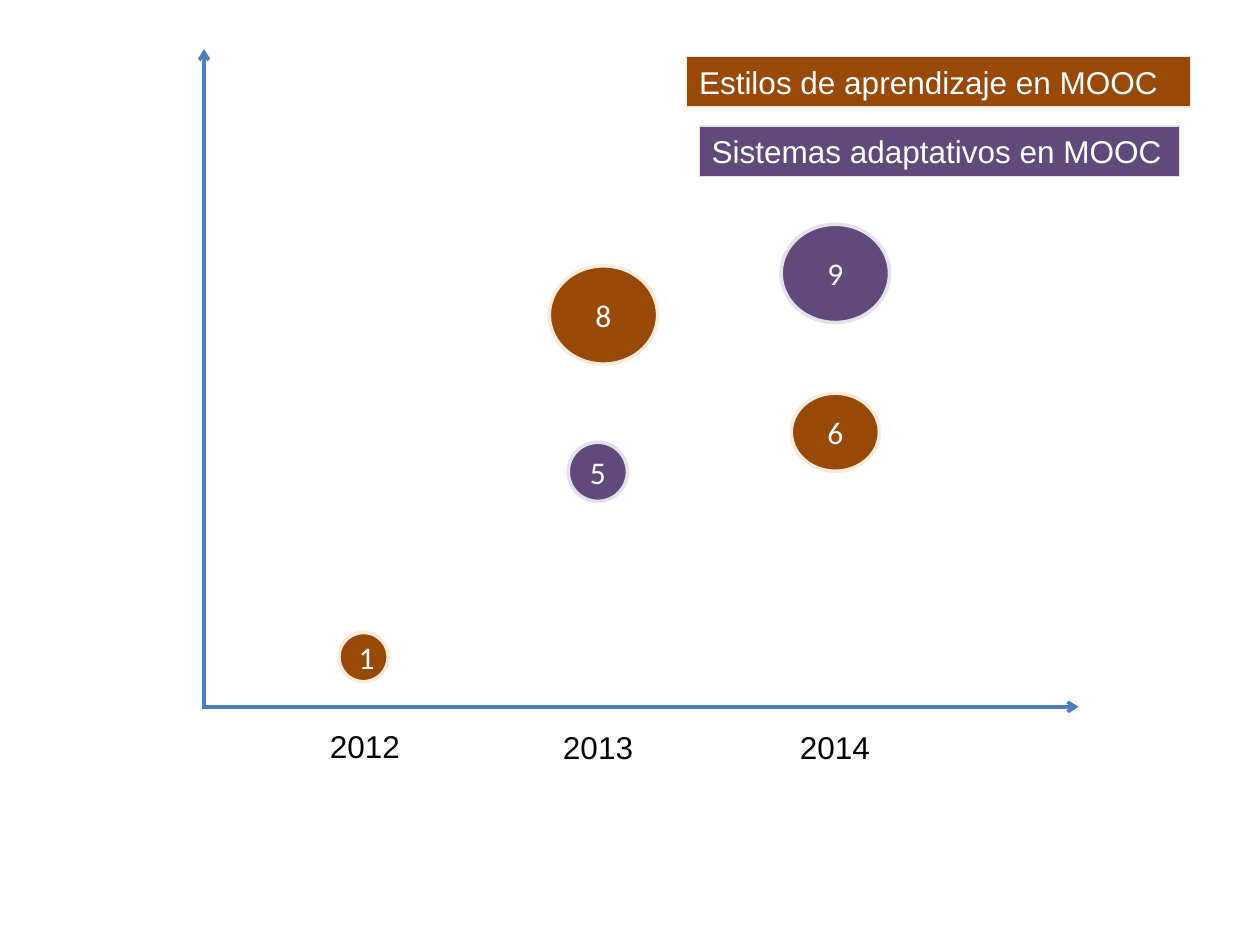
from lxml import etree
from pptx import Presentation
from pptx.dml.color import RGBColor
from pptx.enum.shapes import MSO_CONNECTOR, MSO_SHAPE
from pptx.enum.text import MSO_ANCHOR, PP_ALIGN
from pptx.oxml.ns import qn
from pptx.util import Inches, Pt

STRAIGHT = MSO_CONNECTOR.STRAIGHT
OVAL, RECTANGLE = MSO_SHAPE.OVAL, MSO_SHAPE.RECTANGLE
MIDDLE, TOP = MSO_ANCHOR.MIDDLE, MSO_ANCHOR.TOP
CENTER, LEFT = PP_ALIGN.CENTER, PP_ALIGN.LEFT

COLORS = {
    "axis": "4B7EBC",
    "year": "000000",
    "label": "FFFFFF",
    "styles": "984807",
    "styles_edge": "FDEADA",
    "adaptive": "604A7B",
    "adaptive_edge": "E6E0EC",
}

YEARS = [("2012", 2.52, 5.72), ("2013", 4.37, 5.73), ("2014", 6.25, 5.73)]
BUBBLES = [
    ("1", "styles", (2.69, 5.02, 0.39, 0.39)),
    ("8", "styles", (4.36, 2.11, 0.86, 0.78)),
    ("6", "styles", (6.28, 3.12, 0.7, 0.62)),
    ("5", "adaptive", (4.51, 3.51, 0.47, 0.47)),
    ("9", "adaptive", (6.2, 1.78, 0.86, 0.78)),
]
LEGEND = [
    ("Estilos de aprendizaje en MOOC", "styles", (5.45, 0.45, 4, 0.4)),
    ("Sistemas adaptativos en MOOC", "adaptive", (5.55, 1, 3.81, 0.4)),
]


def color(name):
    return RGBColor.from_string(COLORS[name])


def write(shape, text, font, ink, align):
    para = shape.text_frame.paragraphs[0]
    para.text = text
    para.alignment = align
    para.font.name = font
    para.font.size = Pt(18)
    para.font.color.rgb = color(ink)


def add_axis(page, start, end):
    axis = page.shapes.add_connector(STRAIGHT, *map(Inches, start + end))
    axis.line.color.rgb = color("axis")
    axis.line.width = Pt(2)
    etree.SubElement(axis.line._get_or_add_ln(), qn("a:tailEnd"), type="arrow")
    etree.SubElement(axis._element.spPr, qn("a:effectLst"))


def add_year(page, text, left, top):
    box = page.shapes.add_textbox(*map(Inches, (left, top, 0.76, 0.4)))
    box.text_frame.word_wrap = False
    write(box, text, "Arial", "year", LEFT)


def add_filled(page, kind, series, box, edge_width):
    shape = page.shapes.add_shape(kind, *map(Inches, box))
    shape.shadow.inherit = False
    shape.fill.solid()
    shape.fill.fore_color.rgb = color(series)
    shape.line.color.rgb = color(series + "_edge")
    shape.line.width = Pt(edge_width)
    shape.text_frame.word_wrap = True
    return shape


def add_bubble(page, count, series, box):
    bubble = add_filled(page, OVAL, series, box, 2)
    bubble.text_frame.vertical_anchor = MIDDLE
    write(bubble, count, "Calibri", "label", CENTER)


def add_legend_entry(page, text, series, box):
    entry = add_filled(page, RECTANGLE, series, box, 0.75)
    entry.text_frame.vertical_anchor = TOP
    write(entry, text, "Arial", "label", LEFT)


def main():
    deck = Presentation()
    deck.slide_width, deck.slide_height = Inches(10), Inches(7.5)
    page = deck.slides.add_slide(deck.slide_layouts[6])
    add_axis(page, (1.62, 5.63), (1.62, 0.39))
    add_axis(page, (1.61, 5.61), (8.56, 5.61))
    for year in YEARS:
        add_year(page, *year)
    for bubble in BUBBLES:
        add_bubble(page, *bubble)
    for entry in LEGEND:
        add_legend_entry(page, *entry)
    deck.save("out.pptx")


if __name__ == "__main__":
    main()
